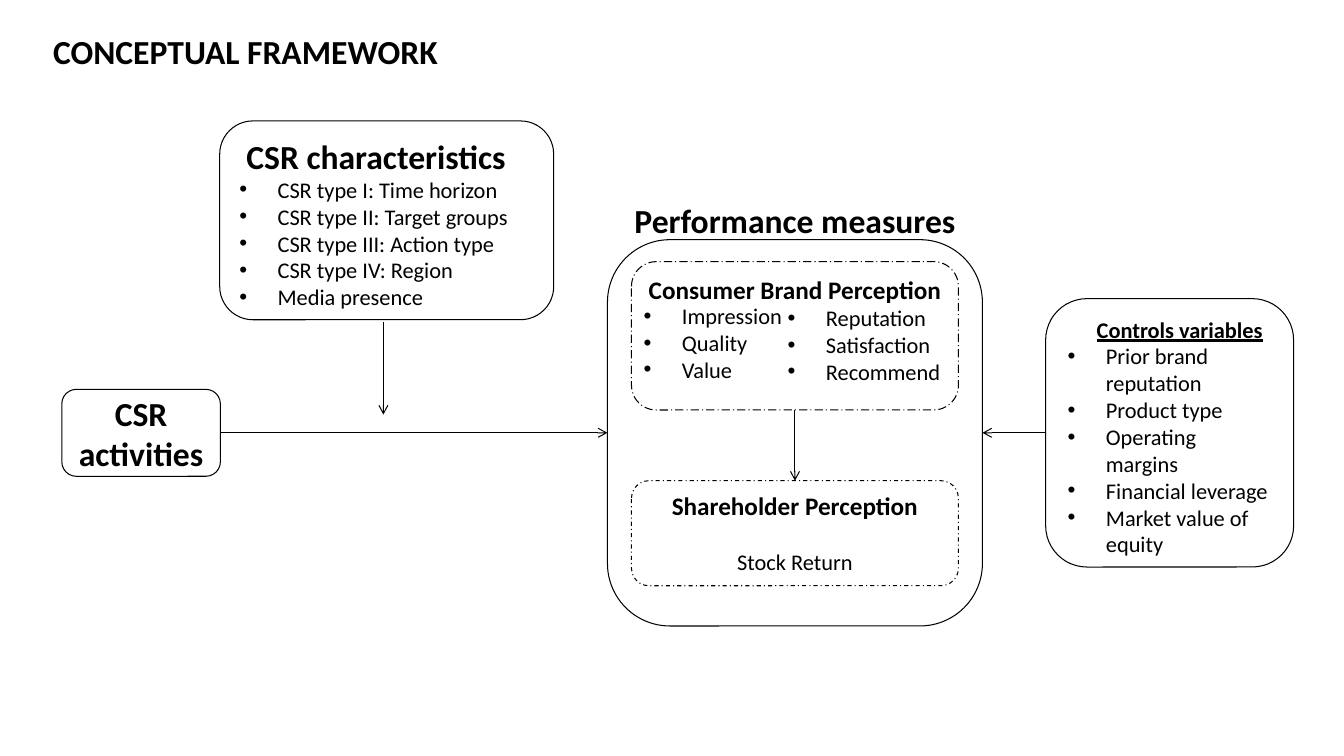
from dataclasses import dataclass

from lxml.etree import SubElement
from pptx import Presentation
from pptx.dml.color import RGBColor
from pptx.enum.dml import MSO_LINE_DASH_STYLE as Dash
from pptx.enum.shapes import MSO_CONNECTOR as Connector, MSO_SHAPE as Shape
from pptx.enum.text import MSO_ANCHOR as Anchor, MSO_AUTO_SIZE as AutoSize, PP_ALIGN as Align
from pptx.oxml.ns import qn
from pptx.util import Inches, Pt

TOP, LEFT, BOTTOM, RIGHT = range(4)  # connection sites of a rectangle


@dataclass(frozen=True)
class Theme:
    ink: RGBColor = RGBColor(0, 0, 0)
    font: str = "Calibri"
    heading: int = 24
    subheading: int = 18
    body: int = 16
    line: float = 0.75
    indent: float = 0.38


THEME = Theme()


@dataclass(frozen=True)
class Box:
    left: float
    top: float
    width: float
    height: float

    def point(self, across, down):
        """Position at percentages of this box."""
        return (int(self.left + self.width * across / 100),
                int(self.top + self.height * down / 100))

    def inner(self, left, top, width, height):
        """Inner box given in percentages of this one."""
        return Box(*self.point(left, top),
                   int(self.width * width / 100), int(self.height * height / 100))

    def bounds(self):
        return self.left, self.top, self.width, self.height


# Text
def write(paragraph, text, size, align=Align.LEFT, indent=0, bullet=False, **formats):
    paragraph.text = text
    paragraph.alignment = align
    properties = paragraph._p.get_or_add_pPr()
    properties.set("marL", str(Inches(indent)))
    properties.set("indent", str(-Inches(indent) if bullet else 0))
    if bullet:
        SubElement(properties, qn("a:buFont")).set("typeface", "Arial")
        SubElement(properties, qn("a:buChar")).set("char", "•")
    values = {"name": THEME.font, "size": Pt(size), **formats}
    for run in paragraph.runs:
        run.font.color.rgb = THEME.ink
        for name, value in values.items():
            setattr(run.font, name, value)


def next_paragraph(frame):
    first = frame.paragraphs[0]
    return frame.add_paragraph() if first.runs else first


def write_bullets(frame, items):
    for item in items:
        write(next_paragraph(frame), item, THEME.body, indent=THEME.indent, bullet=True)


# Shapes
def add_panel(slide, box, anchor=Anchor.TOP, dash=None):
    panel = slide.shapes.add_shape(Shape.ROUNDED_RECTANGLE, *box.bounds())
    panel.shadow.inherit = False
    panel.fill.background()
    panel.line.color.rgb = THEME.ink
    panel.line.width = Pt(THEME.line)
    if dash:
        panel.line.dash_style = dash
    panel.text_frame.word_wrap = True
    panel.text_frame.vertical_anchor = anchor
    return panel


def add_text_box(slide, box, wrap=True):
    frame = slide.shapes.add_textbox(*box.bounds()).text_frame
    frame.word_wrap = wrap
    return frame


def add_arrow(slide, start=(0, 0), end=(0, 0)):
    arrow = slide.shapes.add_connector(Connector.STRAIGHT, *start, *end)
    arrow.line.color.rgb = THEME.ink
    arrow.line.width = Pt(THEME.line)
    properties = arrow._element.spPr
    SubElement(properties.find(qn("a:ln")), qn("a:tailEnd")).set("type", "arrow")
    SubElement(properties, qn("a:effectLst"))
    return arrow


def join(slide, source, source_side, target, target_side):
    arrow = add_arrow(slide)
    arrow.begin_connect(source, source_side)
    arrow.end_connect(target, target_side)


# Regions
def add_title(slide, box, text):
    title = slide.shapes.title
    title.left, title.top, title.width, title.height = box.bounds()
    title.text_frame.auto_size = AutoSize.NONE
    title.text_frame.vertical_anchor = Anchor.MIDDLE
    write(title.text_frame.paragraphs[0], text, THEME.heading, bold=True)


def add_activities(slide, box):
    panel = add_panel(slide, box, Anchor.MIDDLE)
    write(panel.text_frame.paragraphs[0], "CSR\vactivities", THEME.heading,
          Align.CENTER, bold=True)
    return panel


def add_characteristics(slide, box):
    frame = add_panel(slide, box).text_frame
    write(next_paragraph(frame), "CSR characteristics", THEME.heading,
          indent=0.07, bold=True)
    write_bullets(frame, ["CSR type I: Time horizon", "CSR type II: Target groups",
                          "CSR type III: Action type", "CSR type IV: Region",
                          "Media presence"])
    # Moderating effect on the main path
    add_arrow(slide, box.point(49, 101), box.point(49, 147.7))


def add_controls(slide, box):
    panel = add_panel(slide, box)
    frame = panel.text_frame
    write(next_paragraph(frame), "Controls variables", THEME.body, Align.CENTER,
          indent=0.2, bold=True, underline=True)
    write_bullets(frame, ["Prior brand reputation", "Product type", "Operating margins",
                          "Financial leverage", "Market value of equity"])
    return panel


def add_measures(slide, box):
    panel = add_panel(slide, box)
    heading = add_text_box(slide, box.inner(4, -11.5, 92, 13), wrap=False)
    write(heading.paragraphs[0], "Performance measures", THEME.heading,
          Align.CENTER, bold=True)

    # Two perception panels, one leading to the other
    perceptions = []
    for text, top, height, dash in (
            ("Consumer Brand Perception", 5.7, 38.4, Dash.LONG_DASH_DOT),
            ("Shareholder Perception", 62.4, 27.2, Dash.DASH_DOT)):
        perception = add_panel(slide, box.inner(6.4, top, 87.2, height), dash=dash)
        write(perception.text_frame.paragraphs[0], text, THEME.subheading,
              Align.CENTER, bold=True)
        perceptions.append(perception)
    consumer, shareholder = perceptions
    join(slide, consumer, BOTTOM, shareholder, TOP)

    stock_return = shareholder.text_frame.add_paragraph()
    write(stock_return, "Stock Return", THEME.body, Align.CENTER)
    stock_return.space_before = Pt(19.5)

    # Consumer measures in two columns
    for left, top, items in ((7, 14.9, ["Impression", "Quality", "Value"]),
                             (45.4, 15.4, ["Reputation", "Satisfaction", "Recommend"])):
        write_bullets(add_text_box(slide, box.inner(left, top, 50, 23.8)), items)
    return panel


def main():
    presentation = Presentation()
    presentation.slide_width, presentation.slide_height = Inches(13.33), Inches(7.5)
    slide = presentation.slides.add_slide(presentation.slide_layouts[5])
    page = Box(0, 0, presentation.slide_width, presentation.slide_height)

    add_title(slide, page.inner(3.2, 2, 91.7, 9.5), "CONCEPTUAL FRAMEWORK")
    activities = add_activities(slide, page.inner(4.6, 51.5, 11.8, 11.5))
    add_characteristics(slide, page.inner(16.35, 16, 24.85, 26.3))
    measures = add_measures(slide, page.inner(45.2, 31.7, 27.9, 51.1))
    controls = add_controls(slide, page.inner(77.8, 39.5, 18.45, 35.5))

    # Main path and control path
    join(slide, activities, RIGHT, measures, LEFT)
    join(slide, controls, LEFT, measures, RIGHT)
    presentation.save("out.pptx")


if __name__ == "__main__":
    main()
